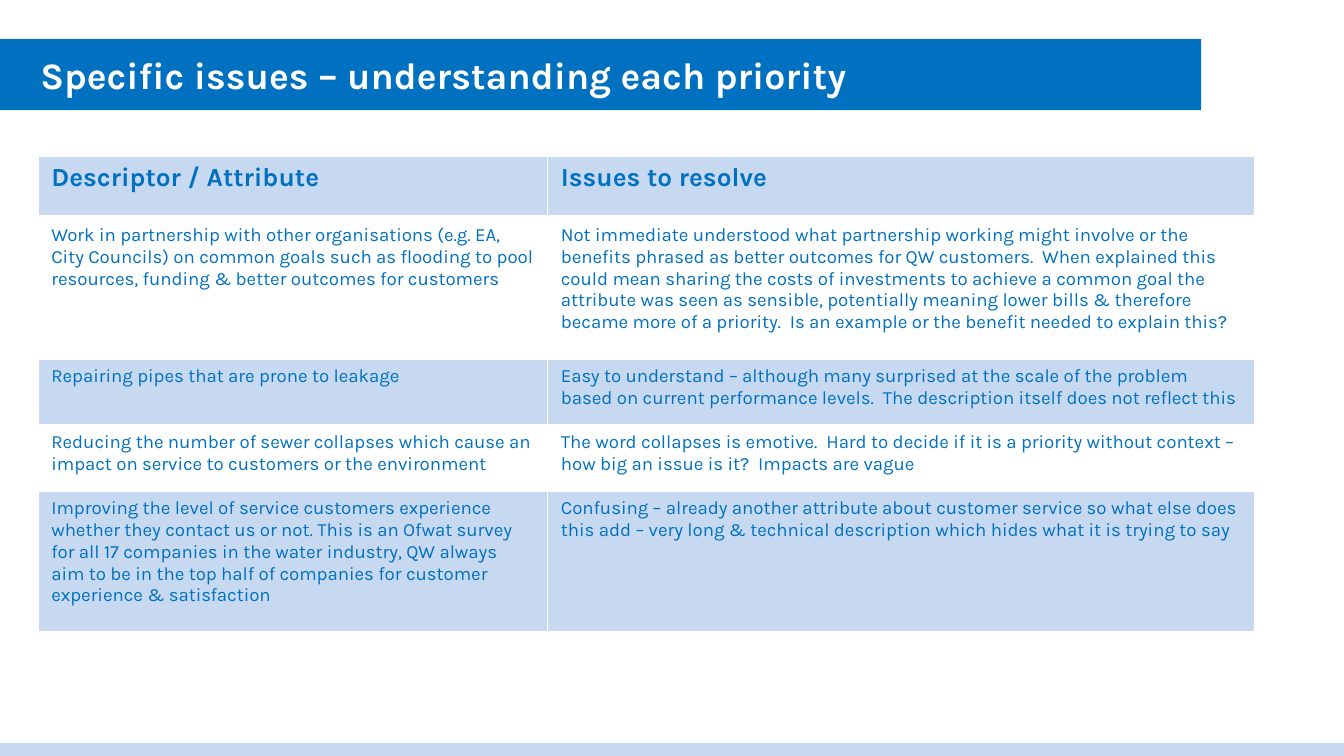
from dataclasses import dataclass

from lxml.etree import SubElement
from pptx import Presentation
from pptx.dml.color import RGBColor
from pptx.enum.shapes import MSO_SHAPE
from pptx.enum.text import MSO_ANCHOR, MSO_AUTO_SIZE, PP_ALIGN
from pptx.oxml.ns import qn
from pptx.util import Pt

BLUE, PALE, WHITE = "0070C0", "C6D9F1", "FFFFFF"
TITLE_FONT = {"name": "Karla", "size": Pt(20), "bold": True}
HEAD_FONT = {"name": "Karla", "size": Pt(14), "bold": True}
BODY_FONT = {"name": "Karla", "size": Pt(10), "bold": False}


@dataclass
class Row:
    height: float
    descriptor: str
    issues: str


ROWS = [
    Row(33, "Descriptor / Attribute", "Issues to resolve"),
    Row(75.5,
        "Work in partnership with other organisations (e.g. EA, City Councils) on common "
        "goals such as flooding to pool resources, funding & better outcomes for customers",
        "Not immediate understood what partnership working might involve or the benefits "
        "phrased as better outcomes for QW customers.  When explained this could mean "
        "sharing the costs of investments to achieve a common goal the attribute was seen "
        "as sensible, potentially meaning lower bills & therefore became more of a "
        "priority.  Is an example or the benefit needed to explain this?"),
    Row(35.5,
        "Repairing pipes that are prone to leakage",
        "Easy to understand – although many surprised at the scale of the problem based on "
        "current performance levels.  The description itself does not reflect this"),
    Row(35.5,
        "Reducing the number of sewer collapses which cause an impact on service to "
        "customers or the environment",
        "The word collapses is emotive.  Hard to decide if it is a priority without "
        "context – how big an issue is it?  Impacts are vague"),
    Row(75.5,
        "Improving the level of service customers experience whether they contact us or "
        "not. This is an Ofwat survey for all 17 companies in the water industry, QW "
        "always aim to be in the top half of companies for customer experience & "
        "satisfaction",
        "Confusing – already another attribute about customer service so what else does "
        "this add – very long & technical description which hides what it is trying to say"),
]
COL_WIDTHS = [273, 379]


def paint(fmt, color: str) -> None:
    """Give a fill one solid colour."""
    fmt.solid()
    fmt.fore_color.rgb = RGBColor.from_string(color)


def write(tf, text: str, font: dict, color: str) -> None:
    p = tf.paragraphs[0]
    p.alignment = PP_ALIGN.LEFT
    r = p.add_run()
    r.text = text
    for name, value in font.items():
        setattr(r.font, name, value)
    r.font.color.rgb = RGBColor.from_string(color)


def add_borders(cell, widths: dict, color: str) -> None:
    """Draw cell borders; must come before the fill in the cell's XML."""
    tc_pr = cell._tc.get_or_add_tcPr()
    for side, width in widths.items():
        ln = SubElement(tc_pr, qn(f"a:ln{side}"), w=str(Pt(width)))
        SubElement(SubElement(ln, qn("a:solidFill")), qn("a:srgbClr"), val=color)


def add_title(s, text: str) -> None:
    sp = s.shapes.title
    sp.left, sp.top, sp.width, sp.height = Pt(0), Pt(21), Pt(643.5), Pt(38)
    paint(sp.fill, BLUE)
    tf = sp.text_frame
    tf.auto_size = MSO_AUTO_SIZE.NONE
    tf.vertical_anchor = MSO_ANCHOR.MIDDLE
    tf.margin_left = Pt(21.6)
    write(tf, text, TITLE_FONT, WHITE)


def add_issue_table(s, rows: list[Row]) -> None:
    frame = s.shapes.add_table(len(rows), len(COL_WIDTHS), Pt(20.3), Pt(83.7),
                               Pt(sum(COL_WIDTHS)), Pt(sum(r.height for r in rows)))
    table = frame.table
    for col, width in zip(table.columns, COL_WIDTHS):
        col.width = Pt(width)
    for i, row in enumerate(rows):
        table.rows[i].height = Pt(row.height)
        # A thick rule parts the header from the first row
        widths = {"L": 1, "R": 1, "T": 3 if i == 1 else 1, "B": 3 if i == 0 else 1}
        for cell, text in zip(table.rows[i].cells, (row.descriptor, row.issues)):
            add_borders(cell, widths, WHITE)
            paint(cell.fill, WHITE if i % 2 else PALE)
            write(cell.text_frame, text, BODY_FONT if i else HEAD_FONT, BLUE)


def add_footer_bar(s) -> None:
    sp = s.shapes.add_shape(MSO_SHAPE.RECTANGLE, Pt(0), Pt(398), Pt(720), Pt(9.4))
    sp.shadow.inherit = False
    paint(sp.fill, PALE)
    sp.line.fill.background()


def main() -> None:
    prs = Presentation()
    prs.slide_width, prs.slide_height = Pt(720), Pt(405)
    s = prs.slides.add_slide(prs.slide_layouts[5])  # Title Only
    add_footer_bar(s)
    add_title(s, "Specific issues – understanding each priority")
    add_issue_table(s, ROWS)
    prs.save("out.pptx")


if __name__ == "__main__":
    main()
